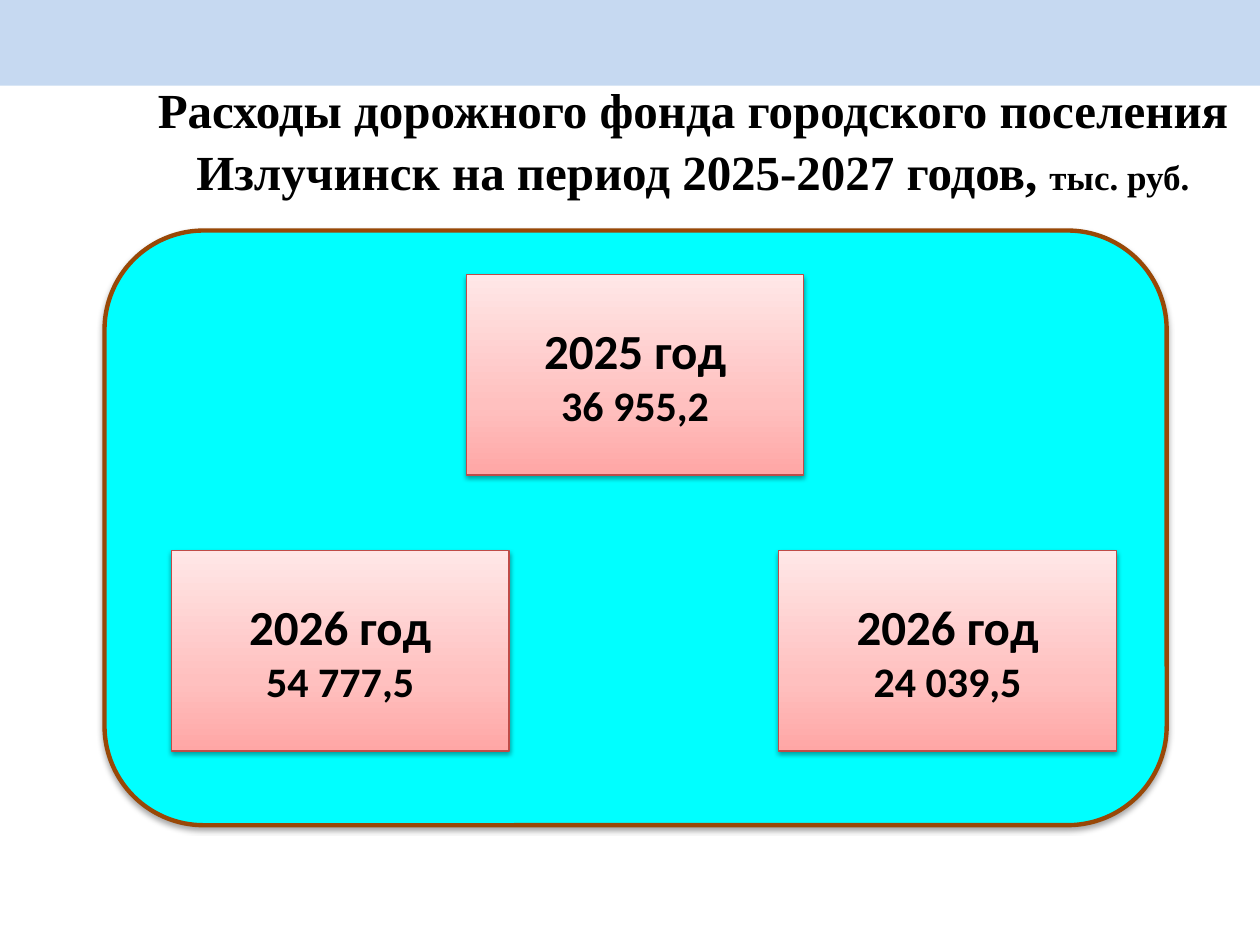
from copy import deepcopy
from dataclasses import dataclass

from lxml import etree
from pptx import Presentation
from pptx import util as u
from pptx.dml.color import RGBColor
from pptx.enum import shapes, text
from pptx.oxml import ns


@dataclass(frozen=True)
class Theme:
    band: str = "C6D9F1"
    panel: str = "00FFFF"
    panel_line: str = "984807"
    card_line: str = "BF4C48"
    card_stops: tuple = ((0, "FFA6A5"), (0.35, "FFC0BF"), (1, "FFE7E7"))
    ink: str = "000000"
    heading_font: str = "Times New Roman"
    card_font: str = "Calibri"
    large: int = 28
    medium: int = 24
    small: int = 20


class RoadFundSlide:
    """Draws the road fund slide, with places given as percentages of its size."""

    def __init__(self, deck, theme):
        self.deck, self.theme = deck, theme
        self.slide = deck.slides.add_slide(deck.slide_layouts[6])

    def place(self, left, top, width, height):
        across, down = self.deck.slide_width / 100, self.deck.slide_height / 100
        return [round(v) for v in (left * across, top * down, width * across, height * down)]

    def block(self, preset, area, line=None, weight=0):
        block = self.slide.shapes.add_shape(preset, *self.place(*area))
        block.shadow.inherit = False
        if line:
            block.line.color.rgb = RGBColor.from_string(line)
            block.line.width = u.Pt(weight)
        else:
            block.line.fill.background()
        return block

    def solid(self, block, colour):
        block.fill.solid()
        block.fill.fore_color.rgb = RGBColor.from_string(colour)

    def cast_shadow(self, block, distance, opacity):
        effects = block.element.spPr.find(ns.qn("a:effectLst"))
        shadow = etree.SubElement(effects, ns.qn("a:outerShdw"), {
            "blurRad": str(u.Pt(3.1)), "dist": str(u.Pt(distance)),
            "dir": "5400000", "rotWithShape": "0"})
        colour = etree.SubElement(shadow, ns.qn("a:srgbClr"), val=self.theme.ink)
        etree.SubElement(colour, ns.qn("a:alpha"), val=str(opacity * 1000))

    def add_words(self, paragraph, words, font, size):
        run = paragraph.add_run()
        run.text = words
        run.font.color.rgb = RGBColor.from_string(self.theme.ink)
        for name, value in {"name": font, "size": u.Pt(size), "bold": True}.items():
            setattr(run.font, name, value)

    def band(self, area):
        self.solid(self.block(shapes.MSO_SHAPE.RECTANGLE, area), self.theme.band)

    def heading(self, area, parts):
        frame = self.slide.shapes.add_textbox(*self.place(*area)).text_frame
        frame.word_wrap = True
        line = frame.paragraphs[0]
        for name, value in {"alignment": text.PP_ALIGN.CENTER, "line_spacing": 1.05}.items():
            setattr(line, name, value)
        for words, size in parts:
            self.add_words(line, words, self.theme.heading_font, size)

    def panel(self, area):
        panel = self.block(shapes.MSO_SHAPE.ROUNDED_RECTANGLE, area, self.theme.panel_line, 2.5)
        self.solid(panel, self.theme.panel)
        self.cast_shadow(panel, 1.8, 35)

    def card(self, left, top, year, amount):
        theme = self.theme
        card = self.block(shapes.MSO_SHAPE.RECTANGLE, (left, top, 26.8, 21.2), theme.card_line, 0.75)
        card.fill.gradient()
        card.fill.gradient_angle = 90
        stops = card.element.spPr.find(".//" + ns.qn("a:gsLst"))
        stops.append(deepcopy(stops[-1]))
        for stop, (position, colour) in zip(card.fill.gradient_stops, theme.card_stops):
            stop.position = position
            stop.color.rgb = RGBColor.from_string(colour)
        self.cast_shadow(card, 1.6, 38)
        frame = card.text_frame
        frame.vertical_anchor = text.MSO_ANCHOR.MIDDLE
        lines = frame.paragraphs[0], frame.add_paragraph()
        for line, words, size in zip(lines, (year, amount), (theme.large, theme.medium)):
            line.alignment = text.PP_ALIGN.CENTER
            self.add_words(line, words, theme.card_font, size)


def main():
    deck = Presentation()
    deck.slide_width, deck.slide_height = u.Inches(10), u.Inches(7.5)
    theme = Theme()
    page = RoadFundSlide(deck, theme)
    page.band((0, 0, 100, 9.07))
    page.heading((10, 7.47, 90, 16.67), (
        ("Расходы дорожного фонда городского поселения Излучинск на период 2025-2027 годов, ", theme.large),
        ("тыс. руб.", theme.small)))
    page.panel((8.3, 24.4, 84.3, 62.93))
    for left, top, year, amount in (
            (37, 29.07, "2025 год", "36 955,2"),
            (61.8, 58.27, "2026 год", "24 039,5"),
            (13.6, 58.27, "2026 год", "54 777,5")):
        page.card(left, top, year, amount)
    deck.save("out.pptx")


if __name__ == "__main__":
    main()
